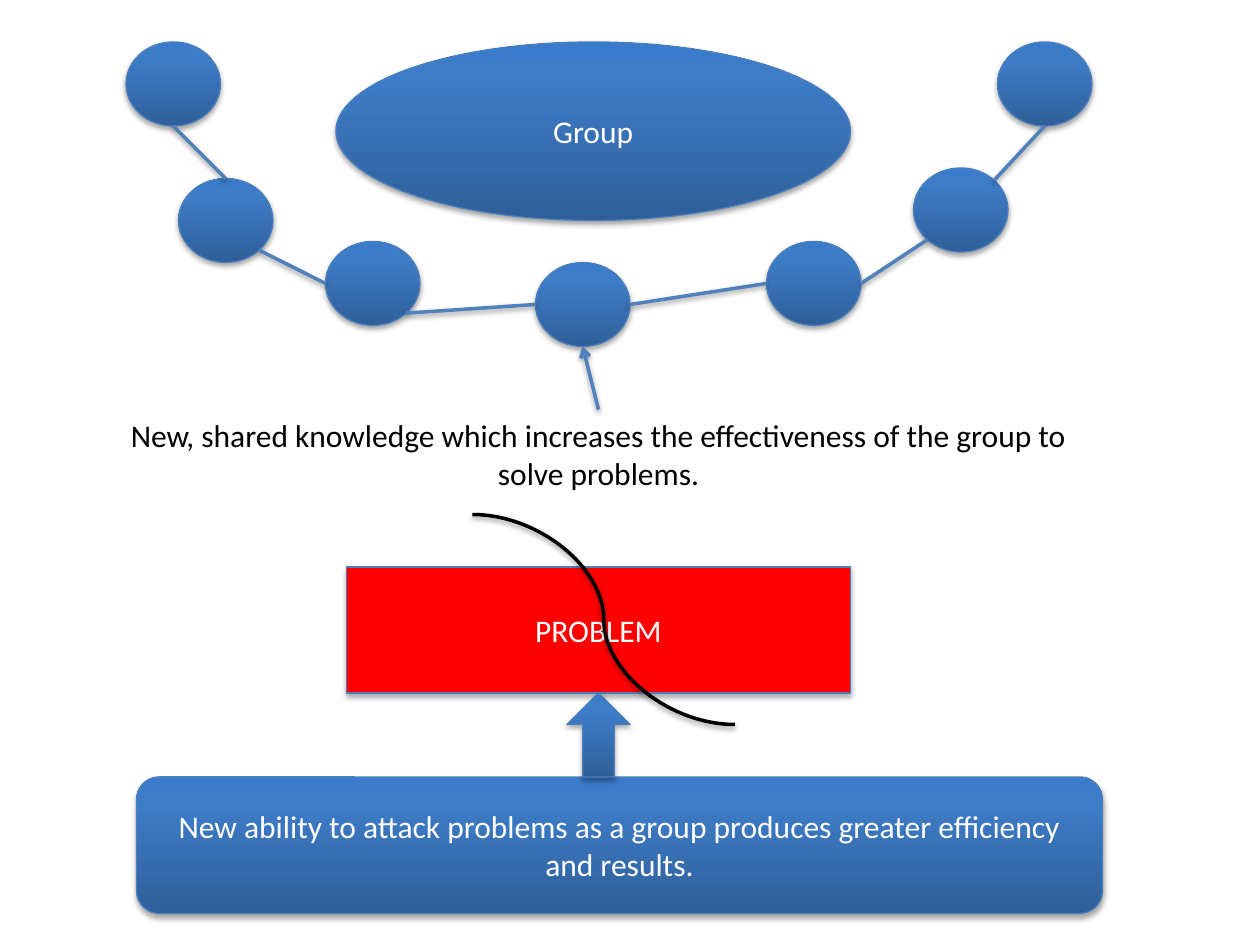
from copy import deepcopy
from math import cos, radians, sin

from lxml import etree
from pptx import Presentation
from pptx.dml.color import RGBColor
from pptx.enum.shapes import MSO_CONNECTOR, MSO_SHAPE
from pptx.enum.text import MSO_ANCHOR, PP_ALIGN
from pptx.oxml.ns import qn
from pptx.util import Pt

OVAL, RECTANGLE = MSO_SHAPE.OVAL, MSO_SHAPE.RECTANGLE
PROCESS, UP_ARROW = MSO_SHAPE.FLOWCHART_ALTERNATE_PROCESS, MSO_SHAPE.UP_ARROW
STRAIGHT, CURVE = MSO_CONNECTOR.STRAIGHT, MSO_CONNECTOR.CURVE
CENTER, MIDDLE = PP_ALIGN.CENTER, MSO_ANCHOR.MIDDLE

COLORS = {
    "deep": "2F5F99", "mid": "3D7CC7", "bright": "3A7CCB", "outline": "4B7EBC",
    "link": "4F81BD", "problem": "FF0000", "black": "000000", "white": "FFFFFF",
}
GRADIENT = [(0, "deep"), (0.8, "mid"), (1, "bright")]

PROBLEM = ("PROBLEM", (198, 324, 288, 72))
GROUP = ("Group", (192, 24, 294, 102))
KNOWLEDGE = (
    "New, shared knowledge which increases the effectiveness of the group to solve problems.",
    (60, 234, 564, 51),
)
RESULT = (
    "New ability to attack problems as a group produces greater efficiency and results.",
    (78, 444, 552, 78),
)
ATTACK_ARROW = (324, 396, 36, 48)
STRIKE = ((270, 294), (420, 414))
POINTER_START = (342, 234)

MEMBER_SIZE = (54, 48)
MEMBERS = [(72, 24), (102, 102), (186, 138), (306, 150), (438, 138), (522, 96), (570, 24)]
RIGHT, LOWER_RIGHT, BOTTOM, LOWER_LEFT, LEFT, TOP, UPPER_RIGHT = 0, 45, 90, 135, 180, 270, 315
LINKS = [
    (BOTTOM, TOP), (LOWER_RIGHT, LEFT), (LOWER_RIGHT, LEFT),
    (RIGHT, LEFT), (RIGHT, LOWER_LEFT), (UPPER_RIGHT, BOTTOM),
]


def color(name):
    return RGBColor.from_string(COLORS[name])


def cast_shadow(part, distance, opacity):
    effects = etree.SubElement(part._element.spPr, qn("a:effectLst"))
    shadow = etree.SubElement(
        effects, qn("a:outerShdw"), blurRad="40000", dist=str(distance),
        dir="5400000", rotWithShape="0",
    )
    black = etree.SubElement(shadow, qn("a:srgbClr"), val=COLORS["black"])
    etree.SubElement(black, qn("a:alpha"), val=str(opacity * 1000))


def write(part, wording, color_name):
    frame = part.text_frame
    frame.word_wrap = True
    frame.text = wording
    paragraph = frame.paragraphs[0]
    paragraph.alignment = CENTER
    paragraph.font.name = "Calibri"
    paragraph.font.size = Pt(18)
    paragraph.font.color.rgb = color(color_name)


def shade(part):
    part.fill.gradient()
    part.fill.gradient_angle = 90
    stops = part._element.spPr.find(qn("a:gradFill")).find(qn("a:gsLst"))
    stops.insert(1, deepcopy(stops[0]))
    for stop, (position, name) in zip(part.fill.gradient_stops, GRADIENT):
        stop.position = position
        stop.color.rgb = color(name)


def add_block(slide, kind, box, wording="", fill=None):
    block = slide.shapes.add_shape(kind, *map(Pt, box))
    if fill:
        block.fill.solid()
        block.fill.fore_color.rgb = color(fill)
    else:
        shade(block)
    block.line.color.rgb = color("outline")
    block.line.width = Pt(0.75)
    cast_shadow(block, 23000, 35)
    if wording:
        write(block, wording, "white")
        block.text_frame.vertical_anchor = MIDDLE


def add_line(slide, start, end, kind=STRAIGHT, stroke="link", arrow=False):
    line = slide.shapes.add_connector(kind, *map(Pt, (*start, *end)))
    line.line.color.rgb = color(stroke)
    line.line.width = Pt(2)
    if arrow:
        etree.SubElement(line._element.spPr.find(qn("a:ln")), qn("a:tailEnd"), type="arrow")
    cast_shadow(line, 20000, 38)


def rim(member, angle):
    turn = radians(angle)
    (left, top), (width, height) = member, MEMBER_SIZE
    return left + width / 2 * (1 + cos(turn)), top + height / 2 * (1 + sin(turn))


def main():
    """Build the slide on shared group knowledge and save it."""
    deck = Presentation()
    deck.slide_width, deck.slide_height = Pt(720), Pt(540)
    slide = deck.slides.add_slide(deck.slide_layouts[6])

    problem, problem_box = PROBLEM
    add_block(slide, RECTANGLE, problem_box, problem, "problem")
    group, group_box = GROUP
    add_block(slide, OVAL, group_box, group)
    for member in MEMBERS:
        add_block(slide, OVAL, (*member, *MEMBER_SIZE))

    knowledge, knowledge_box = KNOWLEDGE
    write(slide.shapes.add_textbox(*map(Pt, knowledge_box)), knowledge, "black")

    for member, neighbour, (leave, arrive) in zip(MEMBERS, MEMBERS[1:], LINKS):
        add_line(slide, rim(member, leave), rim(neighbour, arrive))
    middle_member = MEMBERS[len(MEMBERS) // 2]
    add_line(slide, POINTER_START, rim(middle_member, BOTTOM), arrow=True)

    result, result_box = RESULT
    add_block(slide, PROCESS, result_box, result)
    add_block(slide, UP_ARROW, ATTACK_ARROW)
    add_line(slide, *STRIKE, kind=CURVE, stroke="black")
    deck.save("out.pptx")


if __name__ == "__main__":
    main()
